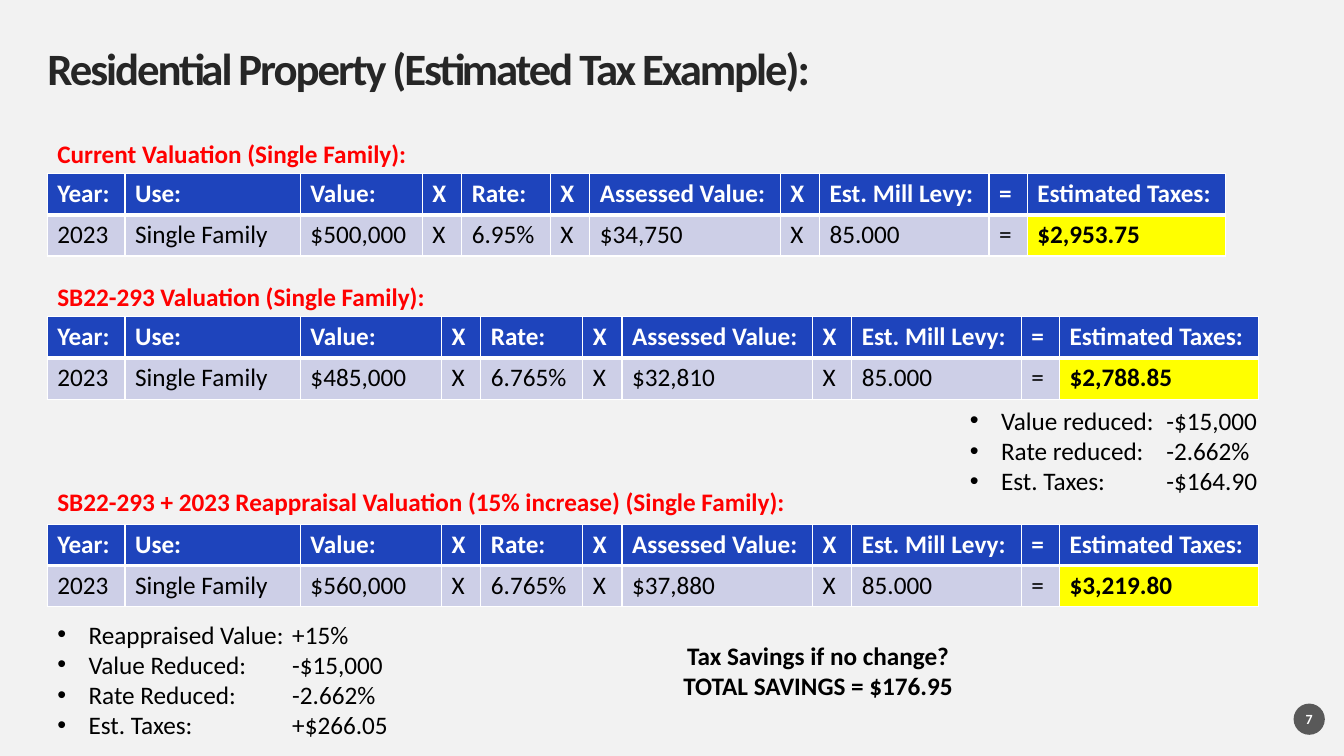
from dataclasses import dataclass

from lxml import etree
from pptx import Presentation
from pptx import util as u
from pptx.dml.color import RGBColor
from pptx.enum import shapes, text
from pptx.oxml import ns

FONT = "Calibri"
LEFT = 0.47
INDENT = 0.31
HEX = {
    "page": "F2F2F2", "title": "262626", "label": "FF0000", "text": "000000",
    "white": "FFFFFF", "head": "1E44BC", "body": "CDCFE7", "total": "FFFF00",
    "badge": "595959",
}
HEADS = ("Year:", "Use:", "Value:", "X", "Rate:", "X", "Assessed Value:", "X",
         "Est. Mill Levy:", "=", "Estimated Taxes:")


@dataclass(frozen=True)
class Case:
    label: str
    top: float
    width: float
    grid: float
    value: str
    rate: str
    base: str
    taxes: str
    value_col: float = 1.4
    rate_col: float = 1.01


@dataclass(frozen=True)
class Notes:
    left: float
    top: float
    height: float
    stop: float
    items: tuple[tuple[str, str], ...]


CASES = (
    Case("Current Valuation (Single Family):", 1.32, 4.36, 1.72,
         "$500,000", "6.95%", "$34,750", "$2,953.75", 1.21, 0.88),
    Case("SB22-293 Valuation (Single Family):", 2.74, 4.36, 3.14,
         "$485,000", "6.765%", "$32,810", "$2,788.85"),
    Case("SB22-293 + 2023 Reappraisal Valuation (15% increase) (Single Family):",
         4.78, 7.98, 5.2, "$560,000", "6.765%", "$37,880", "$3,219.80"),
)
NOTES = (
    Notes(9.52, 3.97, 1.01, 1.95, (
        ("Value reduced:", "-$15,000"),
        ("Rate reduced:", "-2.662%"),
        ("Est. Taxes:", "-$164.90"))),
    Notes(LEFT, 6.09, 1.31, 2.33, (
        ("Reappraised Value:", "+15%"),
        ("Value Reduced:", "-$15,000"),
        ("Rate Reduced:", "-2.662%"),
        ("Est. Taxes:", "+$266.05"))),
)


def color(name: str) -> RGBColor:
    return RGBColor.from_string(HEX[name])


def style(para, tint: str, bold: bool = False, size: float = 18) -> None:
    font = para.font
    font.name, font.size, font.bold = FONT, u.Pt(size), bold
    font.color.rgb = color(tint)


def place(left: float, top: float, width: float, height: float) -> tuple:
    return tuple(u.Inches(n) for n in (left, top, width, height))


def add_box(slide, area: tuple, lines: list[str]):
    frame = slide.shapes.add_textbox(*place(*area)).text_frame
    frame.word_wrap = True
    frame.text = "\n".join(lines)
    return frame


def clear_insets(frame) -> None:
    frame.margin_left = frame.margin_right = 0
    frame.margin_top = frame.margin_bottom = 0
    frame.vertical_anchor = text.MSO_ANCHOR.MIDDLE


def add_title(slide, words: str) -> None:
    title = slide.shapes.title
    title.left, title.top, title.width, title.height = place(LEFT, 0.47, 12.39, 0.47)
    frame = title.text_frame
    frame.text = words
    frame.auto_size = text.MSO_AUTO_SIZE.NONE
    clear_insets(frame)
    para = frame.paragraphs[0]
    para.alignment = text.PP_ALIGN.LEFT
    para.line_spacing = 0.9
    style(para, "title", True, 32)
    para.runs[0].font._element.set("spc", "-150")


def add_borders(cell, head: bool) -> None:
    """Draw white edges, thick where header and body meet."""
    props = cell._tc.get_or_add_tcPr()
    thick = "lnB" if head else "lnT"
    for side in ("lnL", "lnR", "lnT", "lnB"):
        width = u.Pt(3 if side == thick else 1)
        line = etree.SubElement(props, ns.qn(f"a:{side}"), w=str(int(width)))
        fill = etree.SubElement(line, ns.qn("a:solidFill"))
        etree.SubElement(fill, ns.qn("a:srgbClr"), val=HEX["white"])


def add_case(slide, case: Case) -> None:
    label = add_box(slide, (LEFT, case.top, case.width, 0.4), [case.label])
    style(label.paragraphs[0], "label", True)

    cols = (0.77, 1.74, case.value_col, 0.39, case.rate_col, 0.39,
            1.89, 0.39, 1.68, 0.38, 1.97)
    body = ("2023", "Single Family", case.value, "X", case.rate, "X",
            case.base, "X", "85.000", "=", case.taxes)
    area = place(LEFT, case.grid, sum(cols), 0.82)
    table = slide.shapes.add_table(2, len(cols), *area).table
    table.horz_banding = False
    for col, width in zip(table.columns, cols):
        col.width = u.Inches(width)
    for r, row in enumerate((HEADS, body)):
        head = r == 0
        for c, words in enumerate(row):
            total = not head and c == len(cols) - 1
            cell = table.cell(r, c)
            cell.text = words
            add_borders(cell, head)
            cell.fill.solid()
            cell.fill.fore_color.rgb = color(
                "head" if head else "total" if total else "body")
            style(cell.text_frame.paragraphs[0],
                  "white" if head else "text", head or total)


def add_notes(slide, notes: Notes) -> None:
    frame = add_box(slide, (notes.left, notes.top, 3.81, notes.height),
                    [f"{name}\t{value}" for name, value in notes.items])
    for para in frame.paragraphs:
        props = para._p.get_or_add_pPr()
        props.set("marL", str(int(u.Inches(INDENT))))
        props.set("indent", str(int(u.Inches(-INDENT))))
        etree.SubElement(props, ns.qn("a:buFont"), typeface="Arial")
        etree.SubElement(props, ns.qn("a:buChar"), char="•")
        tabs = etree.SubElement(props, ns.qn("a:tabLst"))
        etree.SubElement(tabs, ns.qn("a:tab"),
                         pos=str(int(u.Inches(notes.stop))), algn="l")
        style(para, "text")


def add_savings(slide) -> None:
    frame = add_box(slide, (6.03, 6.3, 4.17, 0.71),
                    ["Tax Savings if no change?", "TOTAL SAVINGS = $176.95"])
    for para in frame.paragraphs:
        para.alignment = text.PP_ALIGN.CENTER
        style(para, "text", True)


def add_badge(slide, number: str) -> None:
    badge = slide.shapes.add_shape(shapes.MSO_SHAPE.OVAL,
                                   *place(12.83, 6.98, 0.31, 0.31))
    badge.shadow.inherit = False
    badge.fill.solid()
    badge.fill.fore_color.rgb = color("badge")
    badge.line.fill.background()
    frame = badge.text_frame
    frame.text = number
    clear_insets(frame)
    para = frame.paragraphs[0]
    para.alignment = text.PP_ALIGN.CENTER
    style(para, "white", True, 10)


def main() -> None:
    deck = Presentation()
    deck.slide_width, deck.slide_height = u.Inches(13.33), u.Inches(7.5)
    slide = deck.slides.add_slide(deck.slide_layouts.get_by_name("Title Only"))
    slide.background.fill.solid()
    slide.background.fill.fore_color.rgb = color("page")
    add_title(slide, "Residential Property (Estimated Tax Example):")
    for case in CASES:
        add_case(slide, case)
    for notes in NOTES:
        add_notes(slide, notes)
    add_savings(slide)
    add_badge(slide, "7")
    deck.save("out.pptx")


if __name__ == "__main__":
    main()
